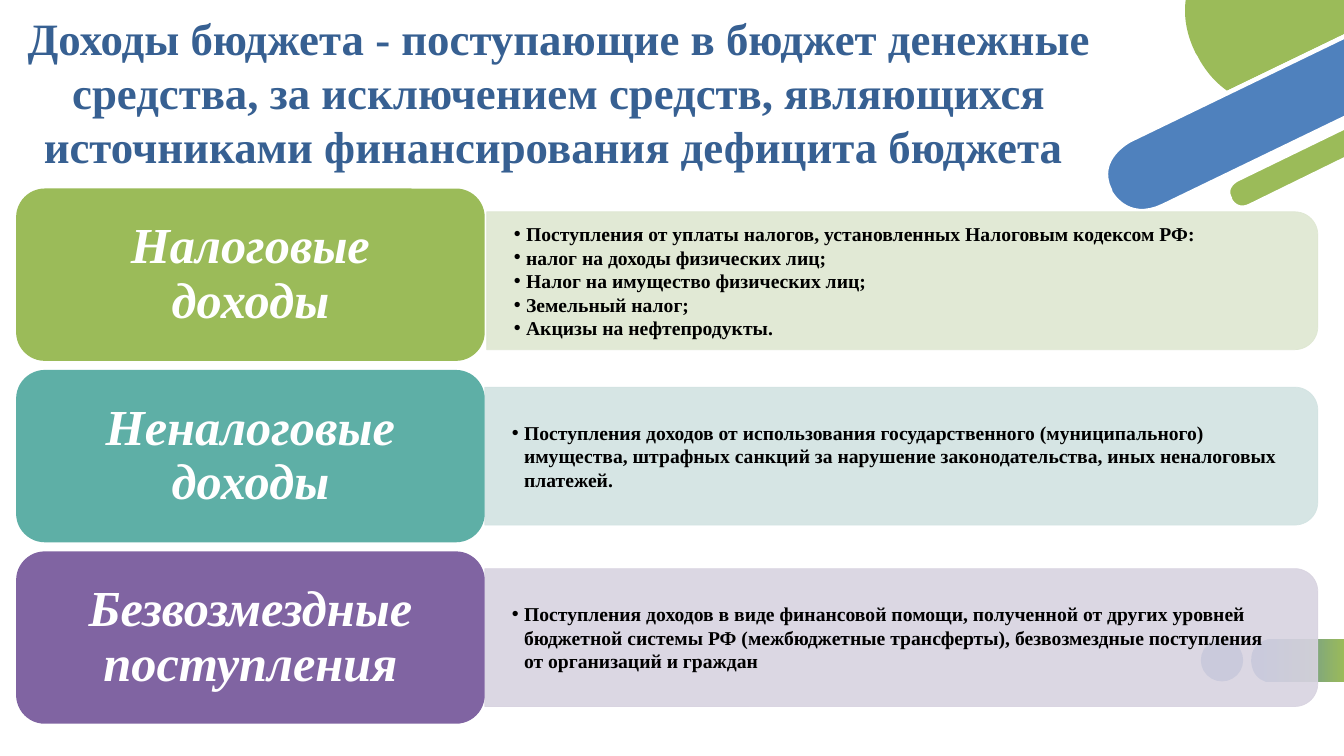
from dataclasses import dataclass
from typing import NamedTuple

from lxml.etree import SubElement
from pptx import Presentation
from pptx.dml.color import RGBColor as RGB
from pptx.enum.shapes import MSO_SHAPE as SHAPE
from pptx.enum.text import MSO_ANCHOR as ANCHOR, MSO_AUTO_SIZE as AUTO_SIZE, PP_ALIGN as ALIGN
from pptx.oxml.ns import qn
from pptx.util import Inches, Pt


@dataclass(frozen=True)
class Theme:
    font: str = "Times New Roman"
    title_size: int = 32
    label_size: int = 36
    list_size: int = 14
    title: str = "376092"
    blue: str = "4F81BD"
    green: str = "9BBB59"
    white: str = "FFFFFF"
    black: str = "000000"


class Box(NamedTuple):
    left: float
    top: float
    width: float
    height: float


class Income(NamedTuple):
    label: str
    items: list
    strong: str
    pale: str
    shift: tuple = (0, 0)


THEME = Theme()
SLIDE_W, SLIDE_H = 13.33, 7.5
COMPARISON_LAYOUT = 4
CARDS = Box(0.16, 1.87, 12.91, 5.31)
CARD_H = 1.71

TITLE = ("Доходы бюджета - поступающие в бюджет денежные средства, за исключением "
         "средств, являющихся источниками финансирования дефицита бюджета ")
INCOMES = [
    Income("Налоговые\vдоходы",
           ["Поступления от уплаты налогов, установленных Налоговым кодексом РФ:",
            "налог на доходы физических лиц;",
            "Налог на имущество физических лиц;",
            "Земельный налог;",
            "Акцизы на нефтепродукты."],
           "9BBB59", "DEE7D1", (0.02, 0.06)),
    Income("Неналоговые доходы",
           ["Поступления доходов от использования государственного (муниципального) "
            "имущества, штрафных санкций за нарушение законодательства, иных "
            "неналоговых платежей."],
           "5EAFA6", "D2E3E2"),
    Income("Безвозмездные поступления",
           ["Поступления доходов в виде финансовой помощи, полученной от других "
            "уровней бюджетной системы РФ (межбюджетные трансферты), безвозмездные "
            "поступления от организаций и граждан"],
           "8064A2", "D8D3E0"),
]

# Outlines in inches from the corner of their region: two numbers make a line, six a curve
DISC = [(0.98, 0.56), (0.98, 0.56, 1.07, 0.76, 1.27, 0.9), (2.43, 0.34), (2.43, 0),
        (0.86, 0), (0.84, 0.15, 0.86, 0.33, 0.96, 0.53)]
WIDE_BAR = [(0.31, 1.39), (0.31, 1.39, -0.05, 1.57, 0.11, 1.89), (0.11, 1.9),
            (0.11, 1.9, 0.27, 2.22, 0.64, 2.04), (2.46, 1.16), (2.46, 0.35)]
THIN_BAR = [(2.46, 1.25), (1.37, 1.78), (1.37, 1.78, 1.23, 1.85, 1.3, 1.97), (1.3, 1.98),
            (1.3, 1.98, 1.36, 2.11, 1.5, 2.04), (2.46, 1.57)]
TAB = [(0.71, 0.43), (1.43, 0.43), (1.43, 0), (0.71, 0),
       (0.71, 0, 0.5, 0, 0.5, 0.21), (0.5, 0.22), (0.5, 0.22, 0.5, 0.43, 0.71, 0.43)]


def inches(box):
    return [Inches(length) for length in box]


def place(shape, box):
    shape.left, shape.top, shape.width, shape.height = inches(box)


def paint(shape, fill, line=None, line_width=0.5):
    shape.shadow.inherit = False
    shape.fill.solid()
    shape.fill.fore_color.rgb = RGB.from_string(fill)
    if line:
        shape.line.color.rgb = RGB.from_string(line)
        shape.line.width = Pt(line_width)
    else:
        shape.line.fill.background()


def set_opacity(shape, percent):
    for color in shape._element.spPr.iter(qn("a:srgbClr")):
        SubElement(color, qn("a:alpha"), val=str(percent * 1000))


def format_frame(frame, anchor, side, edge):
    frame.word_wrap = True
    frame.auto_size = AUTO_SIZE.NONE
    frame.vertical_anchor = anchor
    frame.margin_left = frame.margin_right = Inches(side)
    frame.margin_top = frame.margin_bottom = Inches(edge)


def format_paragraph(paragraph, size, color, align, italic=False):
    paragraph.alignment = align
    paragraph.space_before = paragraph.space_after = Pt(0)
    for run in paragraph.runs:
        font = run.font
        font.name, font.size, font.bold, font.italic = THEME.font, Pt(size), True, italic
        font.color.rgb = RGB.from_string(color)


def add_bullet(paragraph):
    properties = paragraph._p.get_or_add_pPr()
    properties.set("marL", str(Inches(0.12)))
    properties.set("indent", str(-Inches(0.12)))
    SubElement(properties, qn("a:buChar"), char="•")


def flatten(outline, steps=16):
    """Turn lines and cubic curves into a list of points."""
    points = [outline[0]]
    for segment in outline[1:]:
        if len(segment) == 2:
            points.append(segment)
            continue
        knots = [points[-1], segment[:2], segment[2:4], segment[4:]]
        for step in range(1, steps + 1):
            t = step / steps
            weights = ((1 - t) ** 3, 3 * t * (1 - t) ** 2, 3 * t * t * (1 - t), t ** 3)
            points.append(tuple(sum(w * knot[axis] for w, knot in zip(weights, knots))
                                for axis in (0, 1)))
    return points


def add_outline(slide, box, outline, fill, line=None):
    points = [(Inches(box.left + x), Inches(box.top + y)) for x, y in flatten(outline)]
    builder = slide.shapes.build_freeform(*points[0])
    builder.add_line_segments(points[1:], close=True)
    shape = builder.convert_to_shape()
    paint(shape, fill, line, 3.2)
    return shape


def add_corner_ornament(slide, box):
    add_outline(slide, box, DISC, THEME.green)
    add_outline(slide, box, WIDE_BAR, THEME.blue, THEME.white)
    add_outline(slide, box, THIN_BAR, THEME.green, THEME.white)


def add_page_mark(slide, box):
    dot = slide.shapes.add_shape(SHAPE.OVAL, *inches((box.left, box.top, 0.42, 0.42)))
    paint(dot, THEME.blue)
    fill = add_outline(slide, box, TAB, THEME.blue).fill
    fill.gradient()
    fill.gradient_angle = 0
    for stop, position, color in zip(fill.gradient_stops, (0.12, 1), (THEME.blue, THEME.green)):
        stop.position = position
        stop.color.rgb = RGB.from_string(color)


def add_title(slide, box):
    title = slide.shapes.title
    place(title, box)
    title.text_frame.text = TITLE
    format_frame(title.text_frame, ANCHOR.TOP, 0.1, 0.05)
    format_paragraph(title.text_frame.paragraphs[0], THEME.title_size, THEME.title, ALIGN.CENTER)


def add_card(slide, box, income, body):
    """Place a label over the left 36 % of the box and its list on a pale panel beside it."""
    label_w = 0.36 * box.width
    right, down = income.shift
    panel_w, panel_h = box.width - label_w - right, 0.8 * box.height
    panel_left = box.left + label_w + right
    middle = box.top + box.height / 2 + down

    # The panel stands upright before its quarter turn
    upright = Box(panel_left + (panel_w - panel_h) / 2, middle - panel_w / 2, panel_h, panel_w)
    panel = slide.shapes.add_shape(SHAPE.ROUND_2_SAME_RECTANGLE, *inches(upright))
    panel.rotation = 90
    paint(panel, income.pale, income.pale)
    set_opacity(panel, 90)

    list_h = 0.72 * box.height
    place(body, Box(panel_left, middle - list_h / 2, panel_w - 0.06, list_h))
    body.text_frame.text = "\n".join(income.items)
    format_frame(body.text_frame, ANCHOR.MIDDLE, 0.27, 0.14)
    for paragraph in body.text_frame.paragraphs:
        format_paragraph(paragraph, THEME.list_size, THEME.black, ALIGN.LEFT)
        add_bullet(paragraph)
    slide.shapes._spTree.append(body._element)

    label = slide.shapes.add_shape(SHAPE.ROUNDED_RECTANGLE,
                                   *inches((box.left, box.top, label_w, box.height)))
    paint(label, income.strong)
    label.text_frame.text = income.label
    format_frame(label.text_frame, ANCHOR.MIDDLE, 0.24, 0.15)
    caption = label.text_frame.paragraphs[0]
    format_paragraph(caption, THEME.label_size, THEME.white, ALIGN.CENTER, italic=True)
    caption.line_spacing = 0.9


def add_cards(slide, box):
    pitch = (box.height - CARD_H) / (len(INCOMES) - 1)
    *bodies, spare = [p for p in slide.placeholders if p.placeholder_format.idx]
    spare._element.getparent().remove(spare._element)
    for row, (income, body) in enumerate(zip(INCOMES, bodies)):
        add_card(slide, Box(box.left, box.top + row * pitch, box.width, CARD_H), income, body)


def main():
    deck = Presentation()
    deck.slide_width, deck.slide_height = Inches(SLIDE_W), Inches(SLIDE_H)
    slide = deck.slides.add_slide(deck.slide_layouts[COMPARISON_LAYOUT])
    add_page_mark(slide, Box(11.91, 6.34, 1.43, 0.43))
    add_corner_ornament(slide, Box(10.9, 0, 2.43, 2.12))
    add_cards(slide, CARDS)
    add_title(slide, Box(-0.2, 0.06, 11.49, 1.72))
    deck.save("out.pptx")


if __name__ == "__main__":
    main()
